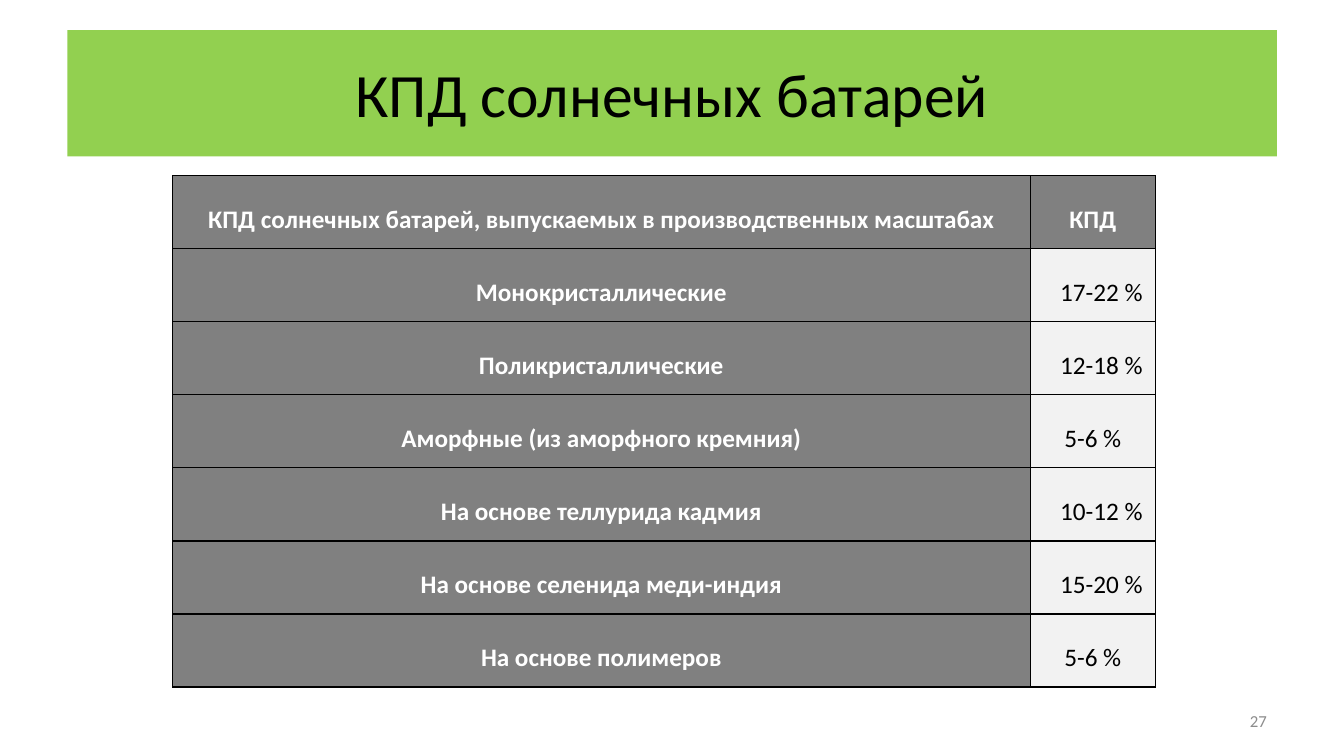
from lxml import etree
from pptx import Presentation
from pptx import util as u
from pptx.dml.color import RGBColor
from pptx.enum import text
from pptx.oxml import ns

GREEN = RGBColor(0x92, 0xD0, 0x50)
GRAY = RGBColor(0x80, 0x80, 0x80)
LIGHT = RGBColor(0xF2, 0xF2, 0xF2)
MUTED = RGBColor(0x8C, 0x8C, 0x8C)
BLACK = RGBColor(0, 0, 0)
WHITE = RGBColor(0xFF, 0xFF, 0xFF)
FONT = "Calibri"

EFFICIENCY = [
    ("КПД солнечных батарей, выпускаемых в производственных масштабах", "КПД"),
    ("Монокристаллические", "17-22 %"),
    ("Поликристаллические", "12-18 %"),
    ("Аморфные (из аморфного кремния)", "5-6 %"),
    ("На основе теллурида кадмия", "10-12 %"),
    ("На основе селенида меди-индия", "15-20 %"),
    ("На основе полимеров", "5-6 %"),
]


def write(frame, words, size, color, align, bold=False):
    """Put one formatted paragraph in a text frame and return it."""
    frame.text = words
    para = frame.paragraphs[0]
    para.alignment = align
    font = para.runs[0].font
    font.name, font.size, font.bold = FONT, u.Pt(size), bold
    font.color.rgb = color
    return para


def add_title(page, left, top, width, height):
    """Place the green title band."""
    title = page.shapes.title
    title.left, title.top, title.width, title.height = left, top, width, height
    title.fill.solid()
    title.fill.fore_color.rgb = GREEN
    title.text_frame.vertical_anchor = text.MSO_ANCHOR.MIDDLE
    write(title.text_frame, "КПД солнечных батарей", 44, BLACK, text.PP_ALIGN.CENTER)


def add_borders(cell):
    """Draw a thin black line on every side of a cell."""
    properties = cell._tc.get_or_add_tcPr()
    for side in ("a:lnL", "a:lnR", "a:lnT", "a:lnB"):
        line = etree.SubElement(properties, ns.qn(side), w=str(u.Pt(1)))
        fill = etree.SubElement(line, ns.qn("a:solidFill"))
        etree.SubElement(fill, ns.qn("a:srgbClr"), val=str(BLACK))


def format_cell(cell, words, is_heading):
    """Fill one table cell as a heading or as a value."""
    add_borders(cell)
    cell.fill.solid()
    cell.fill.fore_color.rgb = GRAY if is_heading else LIGHT
    cell.vertical_anchor = text.MSO_ANCHOR.MIDDLE
    cell.margin_left = cell.margin_right = u.Cm(0.03)
    cell.margin_top = cell.margin_bottom = 0
    color = WHITE if is_heading else BLACK
    para = write(cell.text_frame, words, 18, color, text.PP_ALIGN.CENTER, is_heading)
    para.line_spacing = 1.5
    if not is_heading and len(words) > len("5-6 %"):
        para._p.get_or_add_pPr().set("marL", str(u.Cm(0.43)))


def add_efficiency_table(page, left, top, width, height):
    """Place the table of cell types and their efficiency."""
    frame = page.shapes.add_table(len(EFFICIENCY), 2, left, top, width, height)
    table = frame.table
    value_width = u.Cm(3.16)
    table.columns[0].width = width - value_width
    table.columns[1].width = value_width
    for row, record in enumerate(EFFICIENCY):
        for column, words in enumerate(record):
            format_cell(table.cell(row, column), words, row == 0 or column == 0)


def add_page_number(page, left, top, width, height):
    """Place the page number at the lower right."""
    box = page.shapes.add_textbox(left, top, width, height)
    box.text_frame.word_wrap = True
    box.text_frame.vertical_anchor = text.MSO_ANCHOR.MIDDLE
    write(box.text_frame, "27", 12, MUTED, text.PP_ALIGN.RIGHT)


def main():
    """Build and save the deck."""
    deck = Presentation()
    deck.slide_width, deck.slide_height = u.Cm(33.87), u.Cm(19.05)
    page = deck.slides.add_slide(deck.slide_layouts[5])
    add_title(page, u.Cm(1.7), u.Cm(0.76), u.Cm(30.48), u.Cm(3.18))
    add_efficiency_table(page, u.Cm(4.35), u.Cm(4.43), u.Cm(24.77), u.Cm(12.88))
    add_page_number(page, u.Cm(24.28), u.Cm(17.65), u.Cm(7.9), u.Cm(1.02))
    deck.save("out.pptx")


if __name__ == "__main__":
    main()
